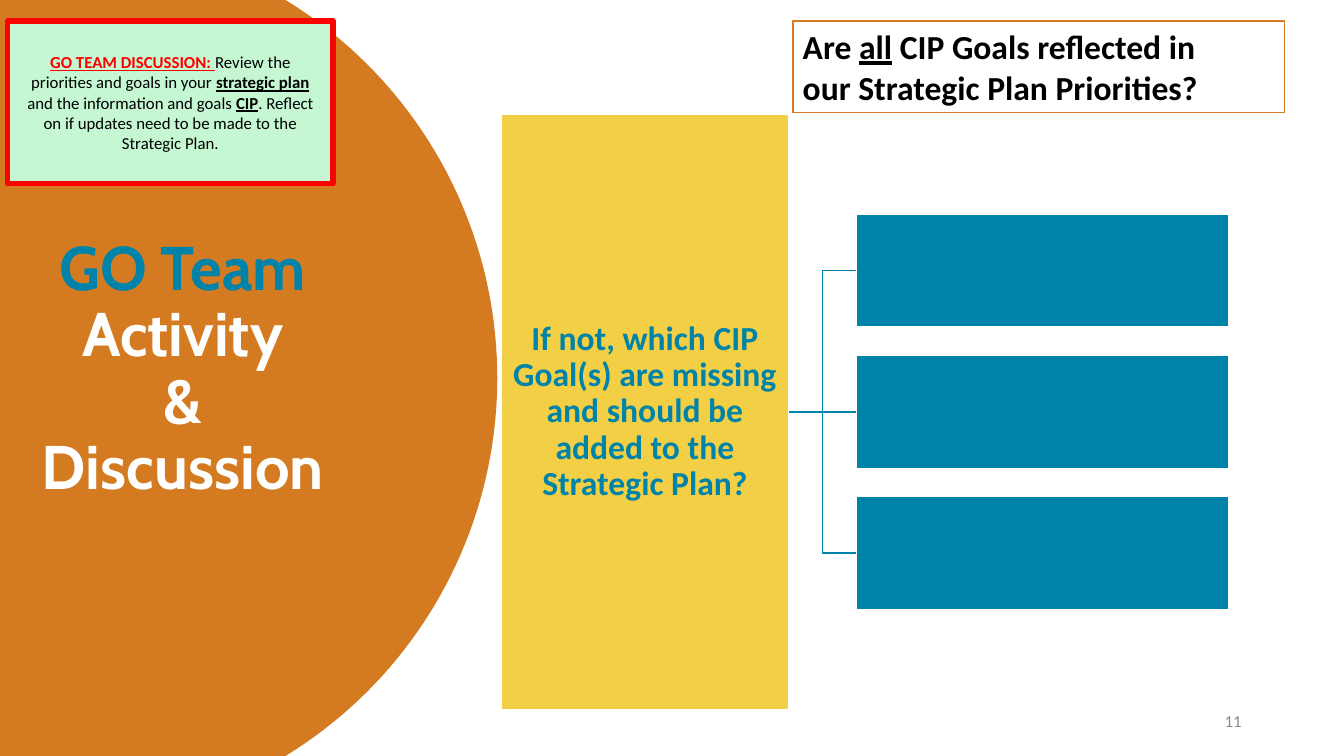
from dataclasses import dataclass, field
from math import asin, cos, sin
from typing import Any

from lxml.etree import SubElement
from pptx import Presentation
from pptx.dml.color import RGBColor
from pptx.enum.shapes import MSO_CONNECTOR, MSO_SHAPE
from pptx.enum.text import MSO_ANCHOR, MSO_AUTO_SIZE, PP_ALIGN
from pptx.oxml.ns import qn
from pptx.util import Pt

WIDE, HIGH = 960, 540
BLUE, ORANGE, GOLD = "0083A9", "D47B22", "F3CF45"
WHITE, BLACK, RED, MINT, GREY = "FFFFFF", "000000", "FF0000", "C4F7D2", "898989"
BREAK = "\n"


@dataclass
class Span:
    text: str
    color: str = BLACK
    bold: bool = True
    under: bool = False


@dataclass
class Box:
    left: float
    top: float
    width: float
    height: float
    fill: str = ""
    line: str = ""
    weight: float = 1


@dataclass
class Copy:
    paras: list[list[Span]]
    size: float
    font: str = "Calibri"
    para: dict[str, Any] = field(default_factory=dict)
    frame: dict[str, Any] = field(default_factory=dict)


def paint(target: Any, color: str) -> None:
    """Give a fill or line a solid colour, or none when the colour is empty."""
    fill = getattr(target, "fill", target)
    if color:
        fill.solid()
        fill.fore_color.rgb = RGBColor.from_string(color)
    else:
        fill.background()


def apply(target: Any, values: dict[str, Any]) -> None:
    for name, value in values.items():
        setattr(target, name, value)


def place(shape: Any, box: Box) -> None:
    apply(shape, {"left": Pt(box.left), "top": Pt(box.top),
                  "width": Pt(box.width), "height": Pt(box.height)})


def write(shape: Any, copy: Copy) -> None:
    frame = shape.text_frame
    apply(frame, {"word_wrap": True, "auto_size": MSO_AUTO_SIZE.NONE,
                  "vertical_anchor": MSO_ANCHOR.MIDDLE, **copy.frame})
    for i, spans in enumerate(copy.paras):
        para = frame.add_paragraph() if i else frame.paragraphs[0]
        apply(para, {"alignment": PP_ALIGN.CENTER, **copy.para})
        for span in spans:
            for j, line in enumerate(span.text.split(BREAK)):
                if j:
                    para.add_line_break()
                if not line:
                    continue
                run = para.add_run()
                run.text = line
                apply(run.font, {"name": copy.font, "size": Pt(copy.size),
                                 "bold": span.bold, "underline": span.under})
                run.font.color.rgb = RGBColor.from_string(span.color)


def draw(slide: Any, box: Box) -> Any:
    shape = slide.shapes.add_shape(MSO_SHAPE.RECTANGLE, 0, 0, 0, 0)
    place(shape, box)
    shape.shadow.inherit = False
    paint(shape.fill, box.fill)
    paint(shape.line, box.line)
    if box.line:
        shape.line.width = Pt(box.weight)
    return shape


def join(slide: Any, start: Any, end: Any, kind: Any) -> None:
    """Link the right side of one box to the left side of another."""
    link = slide.shapes.add_connector(kind, 0, 0, 0, 0)
    link.begin_connect(start, 3)
    link.end_connect(end, 1)
    paint(link.line, BLUE)
    link.line.width = Pt(1)
    SubElement(link._element.spPr, qn("a:effectLst"))


def draw_disc(slide: Any) -> None:
    """Draw the part of the big circle that lies on the slide."""
    mid, radius, steps = 38.6, 316.6, 80
    half = asin(HIGH / 2 / radius)
    turns = [half * (2 * i / steps - 1) for i in range(steps + 1)]
    curve = [(Pt(mid + radius * cos(t)), Pt(HIGH / 2 + radius * sin(t)))
             for t in turns]
    pen = slide.shapes.build_freeform(0, 0)
    pen.add_line_segments(curve + [(0, Pt(HIGH))], close=True)
    disc = pen.convert_to_shape()
    disc.shadow.inherit = False
    paint(disc.fill, ORANGE)
    paint(disc.line, "")


TITLE = Copy([[Span("GO Team\n", BLUE), Span("Activity\n&\nDiscussion", WHITE)]],
             44, "Cabin", {"line_spacing": 0.9})
PROMPT = Copy([[
    Span("GO TEAM DISCUSSION: ", RED, under=True),
    Span("Review the priorities and goals in your ", bold=False),
    Span("strategic plan", under=True),
    Span(" and the information and goals ", bold=False),
    Span("CIP", under=True),
    Span(". Reflect on if updates need to be made to the Strategic Plan.",
         bold=False)]], 12,
    frame={"margin_left": Pt(12), "margin_right": Pt(12)})
HEADING = Copy([[Span("Are "), Span("all", under=True),
                 Span(" CIP Goals reflected in")],
                [Span("our Strategic Plan Priorities?")]], 24,
               para={"alignment": PP_ALIGN.LEFT},
               frame={"vertical_anchor": MSO_ANCHOR.TOP})
ASK = Copy([[Span("If not, which CIP Goal(s) are missing and should be "
                  "added to the Strategic Plan?", BLUE)]], 24,
           para={"line_spacing": 0.9},
           frame={f"margin_{side}": Pt(1.2)
                  for side in ("left", "right", "top", "bottom")})
NUMBER = Copy([[Span("11", GREY, bold=False)]], 12,
              para={"alignment": PP_ALIGN.RIGHT, "space_after": Pt(6)})


def main() -> None:
    deck = Presentation()
    deck.slide_width, deck.slide_height = Pt(WIDE), Pt(HIGH)
    slide = deck.slides.add_slide(deck.slide_layouts[5])
    paint(slide.background.fill, WHITE)

    draw_disc(slide)
    title = slide.shapes.title
    place(title, Box(14.4, 152, 232.4, 224.6))
    write(title, TITLE)
    tree = slide.shapes._spTree
    tree.append(title._element)

    number = slide.shapes.add_textbox(0, 0, 0, 0)
    place(number, Box(678, 500.4, 216, 28.8))
    write(number, NUMBER)

    write(draw(slide, Box(5.5, 15.1, 232.4, 115.9, MINT, RED, 4)), PROMPT)
    write(draw(slide, Box(566.3, 15.1, 351.4, 65.3, "", ORANGE)), HEADING)

    ask = draw(slide, Box(357.8, 81.6, 205.7, 425.2, GOLD, WHITE))
    write(ask, ASK)
    for i in range(3):
        goal = draw(slide, Box(611.8, 153 + 100.9 * i, 265.6, 80.6, BLUE, WHITE))
        join(slide, ask, goal,
             MSO_CONNECTOR.STRAIGHT if i == 1 else MSO_CONNECTOR.ELBOW)

    deck.save("out.pptx")


if __name__ == "__main__":
    main()
